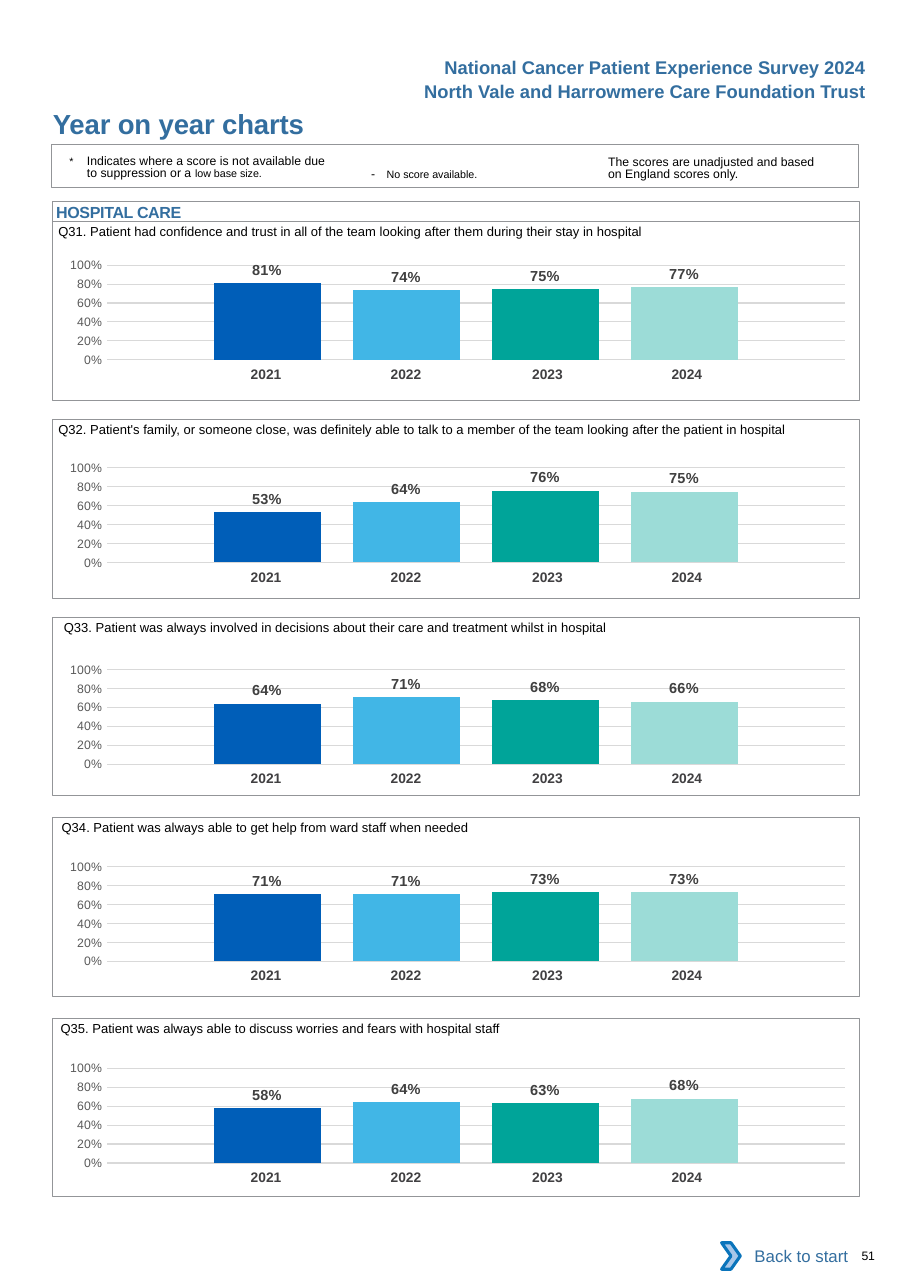
"""Build the hospital care page of year on year survey charts."""
from dataclasses import dataclass
from typing import Optional

import pptx
import pptx.chart.data
import pptx.dml.color
import pptx.enum.chart
import pptx.enum.shapes
import pptx.enum.text
import pptx.oxml
import pptx.util
from lxml import etree

PX = 9144
FONT = "Arial"
BLUE, BLACK, GREY = "336E9F", "000000", "939598"
NO_TABLE_STYLE = "{2D5ABB26-0587-4C30-8999-92F81FD0307C}"
FRAME_LEFT, FRAME_WIDTH, FRAME_HEIGHT = 48, 732, 162
QUESTION_DROP, TABLE_DROP = 2, 106
PLOT_AREA = {"x": 0.079, "y": 0.145, "w": 0.915, "h": 0.666}

ALIGN = pptx.enum.text.PP_ALIGN
SHAPE = pptx.enum.shapes.MSO_SHAPE


@dataclass(frozen=True)
class Run:
    text: str
    size: float
    color: str = BLACK
    bold: bool = False
    spacing: int = 0


@dataclass(frozen=True)
class Label:
    left: int
    top: int
    width: int
    height: int
    runs: tuple[Run, ...]
    align: ALIGN = ALIGN.LEFT
    line_spacing: Optional[float] = None
    hanging: int = 0


@dataclass(frozen=True)
class Box:
    left: int
    top: int
    width: int
    height: int
    fill: Optional[str] = None
    line: Optional[str] = GREY
    line_width: float = 0.5
    preset: SHAPE = SHAPE.RECTANGLE


@dataclass(frozen=True)
class Year:
    name: str
    color: str
    column_width: int
    right_inset: int


@dataclass(frozen=True)
class Panel:
    question: str
    question_left: int
    frame_top: int
    chart_top: int
    scores: tuple[float, ...]


YEARS = (
    Year("2021", "005EB8", 127, 0),
    Year("2022", "41B6E6", 127, 0),
    Year("2023", "00A499", 134, 4),
    Year("2024", "9CDCD7", 127, 12),
)

PANELS = (
    Panel("Q31. Patient had confidence and trust in all of the team looking after them during their stay in hospital",
          53, 201, 222, (0.81, 0.74, 0.75, 0.77)),
    Panel("Q32. Patient's family, or someone close, was definitely able to talk to a member of the team "
          "looking after the patient in hospital", 53, 381, 406, (0.53, 0.64, 0.76, 0.75)),
    Panel("Q33. Patient was always involved in decisions about their care and treatment whilst in hospital",
          58, 560, 589, (0.64, 0.71, 0.68, 0.66)),
    Panel("Q34. Patient was always able to get help from ward staff when needed",
          56, 742, 768, (0.71, 0.71, 0.73, 0.73)),
    Panel("Q35. Patient was always able to discuss worries and fears with hospital staff",
          55, 924, 951, (0.58, 0.64, 0.63, 0.68)),
)

BOXES = (
    Box(47, 131, 732, 39, line_width=0.75),
    Box(FRAME_LEFT, 183, FRAME_WIDTH, 18),
    Box(662, 1119, 118, 42, fill="FFFFFF", line=None),
    Box(655, 1128, 17, 24, "A8C7E9", "0A74BB", 2, SHAPE.CHEVRON),
)

LABELS = (
    Label(346, 51, 440, 20, (Run("National Cancer Patient Experience Survey 2024", 12, BLUE, True),), ALIGN.RIGHT),
    Label(346, 73, 440, 20, (Run("North Vale and Harrowmere Care Foundation Trust", 12, BLUE, True),), ALIGN.RIGHT),
    Label(48, 97, 450, 30, (Run("Year on year charts", 18, BLUE, True, -10),)),
    Label(63, 141, 236, 26, (Run("*\t", 7),
                             Run("Indicates where a score is not available due to suppression or a ", 8),
                             Run("low base size.", 7)), line_spacing=8.1, hanging=16),
    Label(337, 151, 163, 14, (Run("- ", 8, spacing=260), Run("No score available.", 7))),
    Label(552, 142, 201, 26, (Run("The scores are unadjusted and based on England scores only.", 8),),
          line_spacing=8.1),
    Label(51, 184, 720, 17, (Run("HOSPITAL CARE", 10.5, BLUE, True, -20),)),
    Label(662, 1131, 108, 18, (Run("Back to start", 11, BLUE),), ALIGN.RIGHT),
    Label(782, 1133, 41, 13, (Run("51", 8, spacing=-20),)),
)


def px(*lengths: int) -> list[pptx.util.Emu]:
    """Turn px lengths into EMU."""
    return [pptx.util.Emu(n * PX) for n in lengths]


def rgb(value: str) -> pptx.dml.color.RGBColor:
    """Turn a hex string into a colour."""
    return pptx.dml.color.RGBColor.from_string(value)


def style_font(font, size: float, color: str, bold: bool = False) -> None:
    """Give a font its face, size, colour and weight."""
    font.name, font.size, font.bold = FONT, pptx.util.Pt(size), bold
    font.color.rgb = rgb(color)


def add_label(s, label: Label) -> None:
    """Draw a text box without insets."""
    sp = s.shapes.add_textbox(*px(label.left, label.top, label.width, label.height))
    tf = sp.text_frame
    tf.word_wrap = True
    tf.margin_left = tf.margin_top = tf.margin_right = tf.margin_bottom = 0
    p = tf.paragraphs[0]
    p.alignment = label.align
    if label.line_spacing:
        p.line_spacing = pptx.util.Pt(label.line_spacing)
    if label.hanging:
        p_pr = p._p.get_or_add_pPr()
        p_pr.set("marL", str(label.hanging * PX))
        p_pr.set("indent", str(-label.hanging * PX))
    for run in label.runs:
        r = p.add_run()
        r.text = run.text
        style_font(r.font, run.size, run.color, run.bold)
        if run.spacing:
            r._r.get_or_add_rPr().set("spc", str(run.spacing))


def add_box(s, box: Box) -> None:
    """Draw a preset shape."""
    sp = s.shapes.add_shape(box.preset, *px(box.left, box.top, box.width, box.height))
    sp.shadow.inherit = False
    if box.fill:
        sp.fill.solid()
        sp.fill.fore_color.rgb = rgb(box.fill)
    else:
        sp.fill.background()
    if box.line:
        sp.line.color.rgb = rgb(box.line)
        sp.line.width = pptx.util.Pt(box.line_width)
    else:
        sp.line.fill.background()


def add_scores_chart(s, panel: Panel) -> None:
    """Draw one column for each year's score."""
    data = pptx.chart.data.CategoryChartData(number_format="0%")
    data.categories = ["1"]
    for year, score in zip(YEARS, panel.scores):
        data.add_series(year.name, [score])
    kind = pptx.enum.chart.XL_CHART_TYPE.COLUMN_CLUSTERED
    chart = s.shapes.add_chart(kind, *px(39, panel.chart_top, 732, 129), data).chart
    chart.has_title = chart.has_legend = False
    style_font(chart.font, 8, "595959")
    chart.category_axis.visible = False
    axis = chart.value_axis
    axis.minimum_scale, axis.maximum_scale, axis.major_unit = 0, 1, 0.2
    axis.major_tick_mark = pptx.enum.chart.XL_TICK_MARK.NONE
    axis.format.line.fill.background()
    axis.tick_labels.number_format, axis.tick_labels.number_format_is_linked = "0%", False
    axis.major_gridlines.format.line.color.rgb = rgb("D9D9D9")
    axis.major_gridlines.format.line.width = pptx.util.Pt(0.75)
    plot = chart.plots[0]
    plot.gap_width, plot.overlap, plot.vary_by_categories = 200, -30, False
    for year, series in zip(YEARS, plot.series):
        series.format.fill.solid()
        series.format.fill.fore_color.rgb = rgb(year.color)
        labels = series.data_labels
        labels.show_value = True
        labels.number_format, labels.number_format_is_linked = "0%", False
        labels.position = pptx.enum.chart.XL_LABEL_POSITION.OUTSIDE_END
        style_font(labels.font, 9.5, "404040", True)
    set_plot_area(chart)


def set_plot_area(chart) -> None:
    """Fix the inner plot area within the chart."""
    tag = pptx.oxml.ns.qn
    area = chart._chartSpace.chart.plotArea
    for old in area.findall(tag("c:layout")):
        area.remove(old)
    layout = etree.Element(tag("c:layout"))
    manual = etree.SubElement(layout, tag("c:manualLayout"))
    settings = {"layoutTarget": "inner", "xMode": "edge", "yMode": "edge", **PLOT_AREA}
    for name, value in settings.items():
        etree.SubElement(manual, tag(f"c:{name}")).set("val", str(value))
    area.insert(0, layout)


def add_years_table(s, top: int) -> None:
    """Draw the row of years under a chart."""
    width = sum(year.column_width for year in YEARS)
    table = s.shapes.add_table(1, len(YEARS), *px(173, top, width, 27)).table
    table.first_row = table.horz_banding = False
    table._tbl.tblPr[0].text = NO_TABLE_STYLE
    for column, cell, year in zip(table.columns, table.rows[0].cells, YEARS):
        column.width = px(year.column_width)[0]
        cell.fill.background()
        cell.margin_left, cell.margin_top, cell.margin_right, cell.margin_bottom = px(10, 5, year.right_inset, 5)
        p = cell.text_frame.paragraphs[0]
        p.text = year.name
        p.alignment = ALIGN.CENTER
        style_font(p.runs[0].font, 9, "414042", True)


def add_panel(s, panel: Panel) -> None:
    """Draw a framed question with its chart and years."""
    add_years_table(s, panel.chart_top + TABLE_DROP)
    add_scores_chart(s, panel)
    add_box(s, Box(FRAME_LEFT, panel.frame_top, FRAME_WIDTH, FRAME_HEIGHT))
    add_label(s, Label(panel.question_left, panel.frame_top + QUESTION_DROP, 720, 15,
                       (Run(panel.question, 8.5),)))


def main() -> None:
    """Build and save the slide."""
    prs = pptx.Presentation()
    prs.slide_width, prs.slide_height = px(826, 1169)
    s = prs.slides.add_slide(prs.slide_layouts[6])
    for panel in PANELS:
        add_panel(s, panel)
    for box in BOXES:
        add_box(s, box)
    for label in LABELS:
        add_label(s, label)
    prs.save("out.pptx")


if __name__ == "__main__":
    main()
